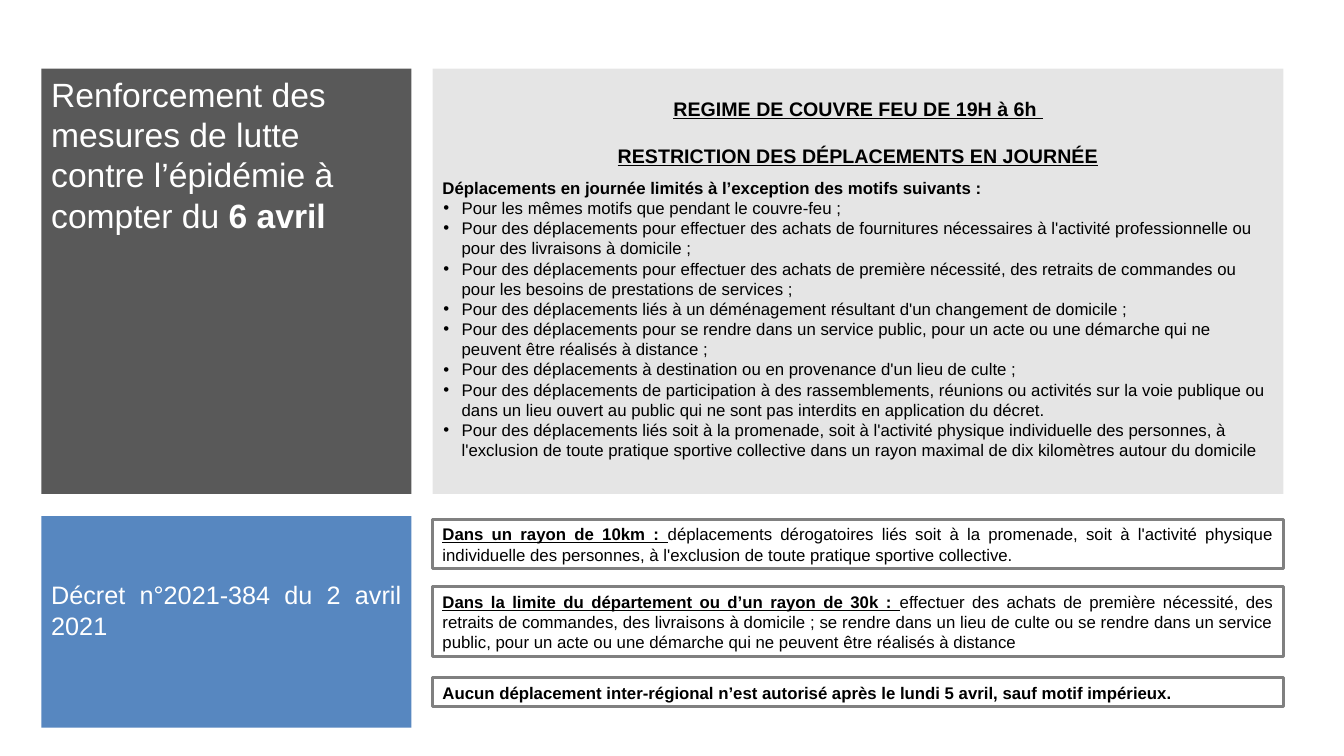
from lxml import etree
from pptx import Presentation
from pptx.dml.color import RGBColor
from pptx.enum.shapes import MSO_SHAPE
from pptx.enum.text import MSO_ANCHOR, PP_ALIGN
from pptx.oxml.ns import qn
from pptx.util import Inches, Pt

WHITE = RGBColor(0xFF, 0xFF, 0xFF)
BLACK = RGBColor(0x00, 0x00, 0x00)
CHARCOAL = RGBColor(0x59, 0x59, 0x59)
BLUE = RGBColor(0x4F, 0x81, 0xBD)
GREY = RGBColor(0x80, 0x80, 0x80)

LEFT_X, LEFT_WIDTH = 0.41, 3.67
RIGHT_X, RIGHT_WIDTH = 4.29, 8.44
TOP_Y, TOP_HEIGHT = 0.68, 4.22

HEADINGS = [
    "REGIME DE COUVRE FEU DE 19H à 6h ",
    "RESTRICTION DES DÉPLACEMENTS EN JOURNÉE",
]
REASONS = [
    "Pour les mêmes motifs que pendant le couvre-feu ;",
    "Pour des déplacements pour effectuer des achats de fournitures nécessaires "
    "à l'activité professionnelle ou pour des livraisons à domicile ;",
    "Pour des déplacements pour effectuer des achats de première nécessité, des retraits "
    "de commandes ou pour les besoins de prestations de services ;",
    "Pour des déplacements liés à un déménagement résultant d'un changement de domicile ;",
    "Pour des déplacements pour se rendre dans un service public, pour un acte ou une "
    "démarche qui ne peuvent être réalisés à distance ;",
    "Pour des déplacements à destination ou en provenance d'un lieu de culte ;",
    "Pour des déplacements de participation à des rassemblements, réunions ou activités sur "
    "la voie publique ou dans un lieu ouvert au public qui ne sont pas interdits en "
    "application du décret.",
    "Pour des déplacements liés soit à la promenade, soit à l'activité physique individuelle "
    "des personnes, à l'exclusion de toute pratique sportive collective dans un rayon maximal "
    "de dix kilomètres autour du domicile",
]
# Top, height, underlined lead, plain text
RULES = [
    (5.15, 0.49, "Dans un rayon de 10km : ",
     "déplacements dérogatoires liés soit à la promenade, soit à l'activité physique "
     "individuelle des personnes, à l'exclusion de toute pratique sportive collective."),
    (5.82, 0.69, "Dans la limite du département ou d’un rayon de 30k : ",
     "effectuer des achats de première nécessité, des retraits de commandes, des livraisons "
     "à domicile ; se rendre dans un lieu de culte ou se rendre dans un service public, pour "
     "un acte ou une démarche qui ne peuvent être réalisés à distance "),
]
NOTICE = ("Aucun déplacement inter-régional n’est autorisé après le lundi 5 avril, "
          "sauf motif impérieux.")


class SlideBuilder:
    def __init__(self, page, font="Arial"):
        self.page = page
        self.font = font

    def panel(self, x, y, width, height, fill, opacity=100, line=None, top_inset=0.05):
        """Draw a rectangle and return its empty text frame."""
        box = self.page.shapes.add_shape(
            MSO_SHAPE.RECTANGLE, Inches(x), Inches(y), Inches(width), Inches(height))
        box.shadow.inherit = False
        box.fill.solid()
        box.fill.fore_color.rgb = fill
        if opacity < 100:
            color = box.fill._xPr.find(qn("a:solidFill"))[0]
            etree.SubElement(color, qn("a:alpha"), val=str(opacity * 1000))
        if line is None:
            box.line.fill.background()
        else:
            box.line.color.rgb = line
            box.line.width = Pt(2)
        frame = box.text_frame
        frame.word_wrap = True
        frame.vertical_anchor = MSO_ANCHOR.TOP
        frame.margin_left = frame.margin_right = Inches(0.1)
        frame.margin_top, frame.margin_bottom = Inches(top_inset), Inches(0.05)
        return frame

    def para(self, frame, align=PP_ALIGN.LEFT, spacing=None):
        first = frame.paragraphs[0]
        para = frame.add_paragraph() if first.runs else first
        para.alignment = align
        if spacing:
            para.line_spacing = spacing
        return para

    def span(self, para, text, size=12, color=BLACK, bold=False, underline=False):
        span = para.add_run()
        span.text = text
        span.font.name = self.font
        span.font.size = Pt(size)
        span.font.color.rgb = color
        span.font.bold = bold
        span.font.underline = underline

    def bullet(self, frame, text):
        para = self.para(frame)
        props = para._p.get_or_add_pPr()
        props.set("marL", str(Inches(0.19)))
        props.set("indent", str(Inches(-0.18)))
        etree.SubElement(props, qn("a:buFont"), typeface=self.font)
        etree.SubElement(props, qn("a:buChar"), char="•")
        self.span(para, text)

    def framed_note(self, y, height):
        """Draw a white bordered box and return its justified paragraph."""
        frame = self.panel(RIGHT_X, y, RIGHT_WIDTH, height, WHITE, line=GREY)
        return self.para(frame, PP_ALIGN.JUSTIFY)


def main():
    deck = Presentation()
    deck.slide_width, deck.slide_height = Inches(13.33), Inches(7.5)
    builder = SlideBuilder(deck.slides.add_slide(deck.slide_layouts[6]))

    title = builder.para(builder.panel(LEFT_X, TOP_Y, LEFT_WIDTH, TOP_HEIGHT, CHARCOAL))
    builder.span(title, "Renforcement des mesures de lutte contre l’épidémie à compter du ",
                 24, WHITE)
    builder.span(title, "6 avril", 24, WHITE, bold=True)

    decree = builder.panel(LEFT_X, 5.12, LEFT_WIDTH, 2.1, BLUE, opacity=95, top_inset=0.63)
    builder.span(builder.para(decree, PP_ALIGN.JUSTIFY),
                 "Décret n°2021-384 du 2 avril 2021 ", 18, WHITE)

    measures = builder.panel(RIGHT_X, TOP_Y, RIGHT_WIDTH, TOP_HEIGHT, GREY, opacity=20)
    for heading in HEADINGS:
        builder.span(builder.para(measures, PP_ALIGN.CENTER, 2.0), heading, 14,
                     bold=True, underline=True)
    builder.span(builder.para(measures, spacing=1.5),
                 "Déplacements en journée limités à l’exception des motifs suivants :", bold=True)
    for reason in REASONS:
        builder.bullet(measures, reason)

    for y, height, lead, detail in RULES:
        rule = builder.framed_note(y, height)
        builder.span(rule, lead, bold=True, underline=True)
        builder.span(rule, detail)
    builder.span(builder.framed_note(6.72, 0.29), NOTICE, bold=True)

    deck.save("out.pptx")


if __name__ == "__main__":
    main()
